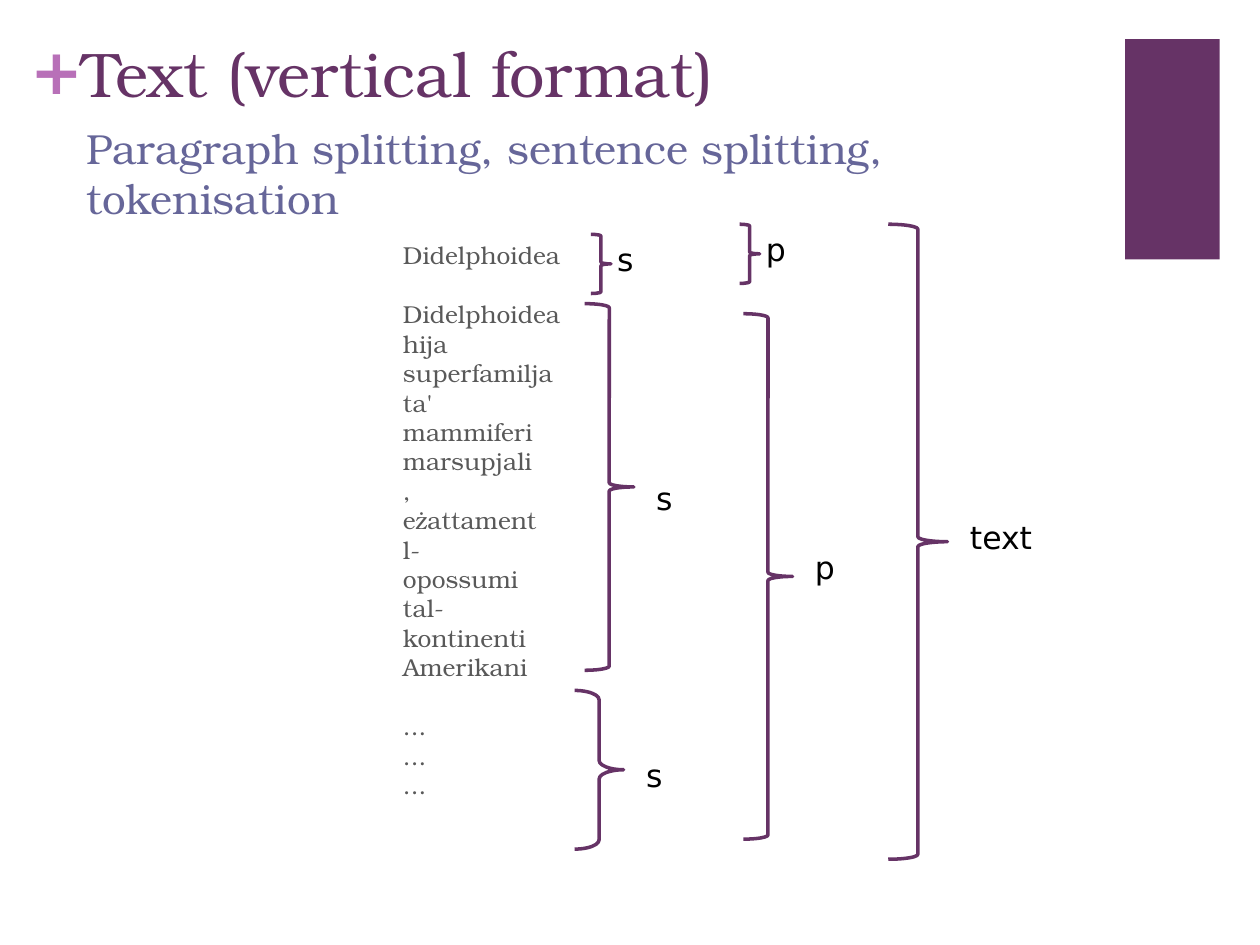
from pptx import Presentation
from pptx.dml.color import RGBColor
from pptx.enum.shapes import MSO_SHAPE
from pptx.enum.text import MSO_ANCHOR
from pptx.util import Inches, Pt

RECTANGLE = MSO_SHAPE.RECTANGLE
RIGHT_BRACE = MSO_SHAPE.RIGHT_BRACE
TOP, BOTTOM = MSO_ANCHOR.TOP, MSO_ANCHOR.BOTTOM

SERIF, SANS = "TeX Gyre Bonum", "DejaVu Sans"
PURPLE, ORCHID, SLATE = "663366", "B870B8", "666699"
GREY, BLACK = "595959", "000000"


def color(hex_string):
    return RGBColor.from_string(hex_string)


class SlideBuilder:
    def __init__(self, page):
        self.page = page

    def block(self, left, top, width, height, fill):
        box = self.page.shapes.add_shape(
            RECTANGLE, Inches(left), Inches(top), Inches(width), Inches(height))
        box.shadow.inherit = False
        box.fill.solid()
        box.fill.fore_color.rgb = color(fill)
        box.line.fill.background()

    def brace(self, left, top, width, height, curl=None):
        """Draw a right brace; curl is the corner roundness, if not the usual."""
        brace = self.page.shapes.add_shape(
            RIGHT_BRACE, Inches(left), Inches(top), Inches(width), Inches(height))
        brace.shadow.inherit = False
        brace.fill.background()
        brace.line.color.rgb = color(PURPLE)
        brace.line.width = Pt(2)
        if curl is not None:
            brace.adjustments[0] = curl

    def text(self, left, top, width, height, groups, size, font, ink,
             bold=False, wrap=True, anchor=TOP, inset=None):
        """Write groups of one-line paragraphs, one line apart from each other."""
        box = self.page.shapes.add_textbox(
            Inches(left), Inches(top), Inches(width), Inches(height))
        frame = box.text_frame
        frame.word_wrap = wrap
        frame.vertical_anchor = anchor
        if inset is not None:
            frame.margin_left = frame.margin_right = Inches(inset)
            frame.margin_top = frame.margin_bottom = Inches(inset)
        for group_index, lines in enumerate(groups):
            for line_index, line in enumerate(lines):
                first = group_index == line_index == 0
                para = frame.paragraphs[0] if first else frame.add_paragraph()
                if group_index and line_index == 0:
                    para.space_before = Pt(size * 1.2)
                span = para.add_run()
                span.text = line
                span.font.size = Pt(size)
                span.font.name = font
                span.font.bold = bold
                span.font.color.rgb = color(ink)

    def label(self, left, top, width, word):
        self.text(left, top, width, 0.4, [[word]], 18, SANS, BLACK, wrap=False)


TOKENS = [
    ["Didelphoidea"],
    ["Didelphoidea", "hija", "superfamilja", "ta'", "mammiferi", "marsupjali",
     ",", "eżattament", "l-", "opossumi", "tal-", "kontinenti", "Amerikani"],
    ["..."] * 3,
]

# Brace left, top, width, height and curl
BRACES = [
    (4.69, 1.86, 0.16, 0.47),
    (4.64, 2.41, 0.39, 2.91),
    (4.56, 5.48, 0.39, 1.26, 0.19),
    (5.87, 1.78, 0.16, 0.47),
    (5.9, 2.49, 0.39, 4.17),
    (7.05, 1.78, 0.47, 5.04),
]

# Label left, top, width and word
LABELS = [
    (4.8, 1.86, 0.33, "s"),
    (5.11, 3.75, 0.33, "s"),
    (5.03, 5.95, 0.33, "s"),
    (5.98, 1.78, 0.36, "p"),
    (6.37, 4.3, 0.36, "p"),
    (7.6, 4.06, 0.7, "text"),
]


def main():
    deck = Presentation()
    deck.slide_width, deck.slide_height = Inches(10), Inches(7.5)
    builder = SlideBuilder(deck.slides.add_slide(deck.slide_layouts[6]))

    builder.block(8.93, 0.31, 0.75, 1.75, PURPLE)
    builder.text(0.24, 0.25, 0.29, 0.61, [["+"]], 36, SANS, ORCHID,
                 bold=True, wrap=False, inset=0)
    builder.text(0.55, 0.15, 8.26, 0.77, [["Text (vertical format)"]],
                 36, SERIF, PURPLE, anchor=BOTTOM)
    builder.text(0.59, 0.92, 8.27, 0.55,
                 [["Paragraph splitting, sentence splitting, tokenisation"]],
                 24, SERIF, SLATE)
    builder.text(3.1, 1.86, 2.64, 4.96, TOKENS, 14, SERIF, GREY)

    for brace in BRACES:
        builder.brace(*brace)
    for label in LABELS:
        builder.label(*label)

    deck.save("out.pptx")


if __name__ == "__main__":
    main()
